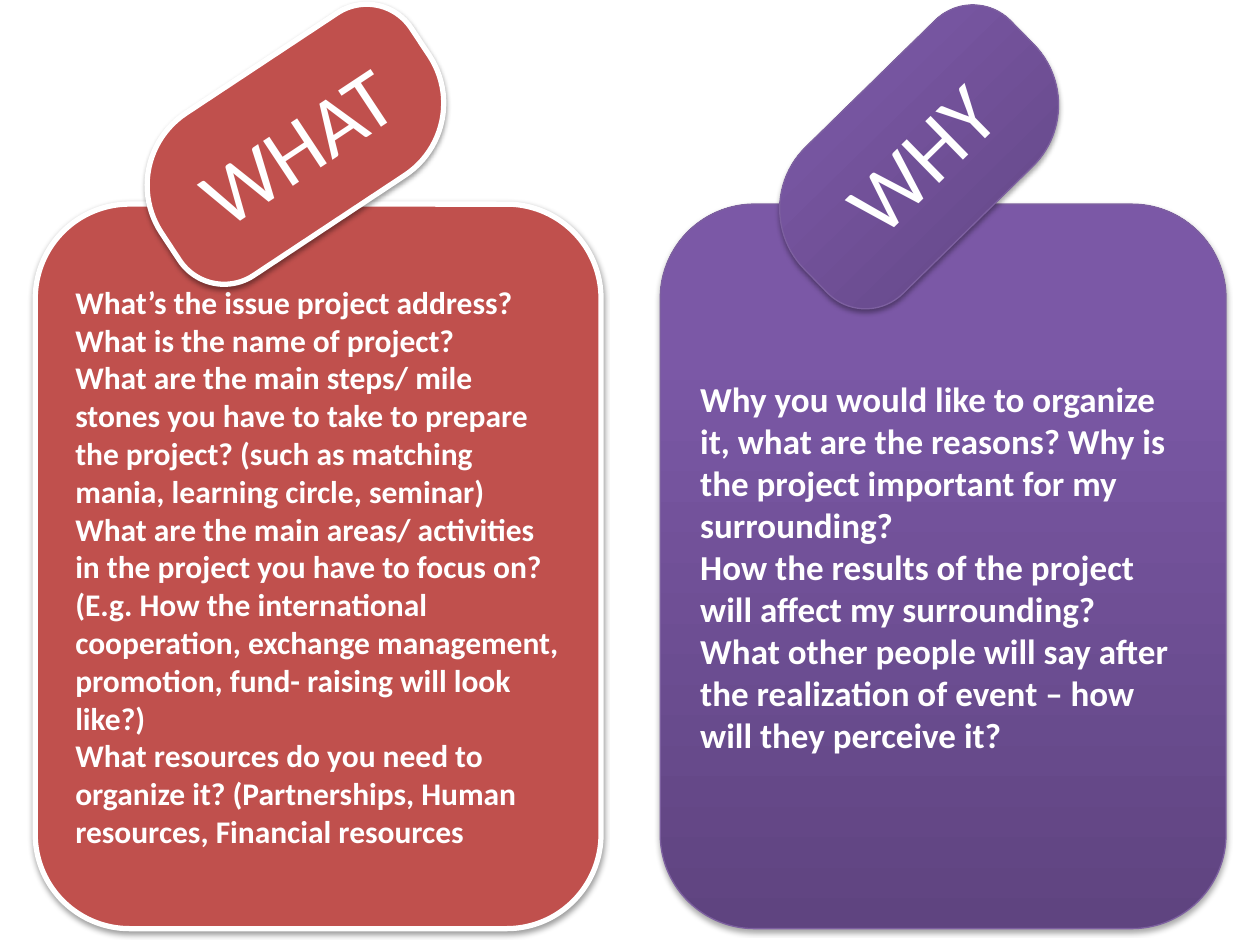
from copy import deepcopy

from lxml import etree
from pptx import Presentation
from pptx.dml.color import RGBColor
from pptx.enum.shapes import MSO_SHAPE
from pptx.enum.text import MSO_ANCHOR, PP_ALIGN
from pptx.oxml.ns import qn
from pptx.util import Inches, Pt

PANEL = MSO_SHAPE.ROUNDED_RECTANGLE
TAG = MSO_SHAPE.ROUND_2_DIAG_RECTANGLE
MIDDLE = MSO_ANCHOR.MIDDLE
LEFT, CENTER = PP_ALIGN.LEFT, PP_ALIGN.CENTER

WHITE = RGBColor(0xFF, 0xFF, 0xFF)
RED = RGBColor(0xC0, 0x50, 0x4D)
PURPLE_LINE = RGBColor(0x7D, 0x60, 0xA0)
PURPLE_STOPS = [
    (0, RGBColor(0x5F, 0x44, 0x80)),
    (0.8, RGBColor(0x7B, 0x58, 0xA6)),
    (1, RGBColor(0x7C, 0x57, 0xA8)),
]

PANEL_TOP, PANEL_W, PANEL_H = 1.62, 4.49, 5.75
TAG_W, TAG_H = 2.55, 1.37

WHAT = [
    "What’s the issue project address? What is the name of project?",
    "What are the main steps/ mile stones you have to take to prepare the project? "
    "(such as matching mania, learning circle, seminar)",
    "What are the main areas/ activities in the project you have to focus on?",
    "(E.g. How the international cooperation, exchange management, promotion, "
    "fund- raising will look like?)",
    "What resources do you need to organize it? "
    "(Partnerships, Human resources, Financial resources",
]
WHY = [
    "Why you would like to organize it, what are the reasons? "
    "Why is the project important for my surrounding?",
    "How the results of the project will affect my surrounding?",
    "What other people will say after the realization of event – "
    "how will they perceive it?",
]


def add_shadow(sp, alpha, distance):
    sp.shadow.inherit = False
    effects = sp._element.spPr.find(qn("a:effectLst"))
    shadow = etree.SubElement(
        effects, qn("a:outerShdw"), blurRad=str(Pt(3.1)), dist=str(Pt(distance)),
        dir="5400000", rotWithShape="0")
    color = etree.SubElement(shadow, qn("a:srgbClr"), val="000000")
    etree.SubElement(color, qn("a:alpha"), val=str(alpha * 1000))


def style_red(sp):
    sp.fill.solid()
    sp.fill.fore_color.rgb = RED
    sp.line.color.rgb = WHITE
    sp.line.width = Pt(3)
    add_shadow(sp, 38, 1.6)


def style_purple(sp):
    sp.fill.gradient()
    sp.fill.gradient_angle = 90
    stop_list = sp._element.spPr.find(qn("a:gradFill")).find(qn("a:gsLst"))
    stop_list.append(deepcopy(stop_list[0]))
    for stop, (position, color) in zip(sp.fill.gradient_stops, PURPLE_STOPS):
        stop.position = position
        stop.color.rgb = color
    sp.line.color.rgb = PURPLE_LINE
    sp.line.width = Pt(0.75)
    add_shadow(sp, 35, 1.8)


def add_block(s, kind, box, style, lines, size, bold, align):
    sp = s.shapes.add_shape(kind, *(Inches(v) for v in box))
    style(sp)
    tf = sp.text_frame
    tf.word_wrap = True
    tf.vertical_anchor = MIDDLE
    tf.text = "\n".join(lines)
    for p in tf.paragraphs:
        p.alignment = align
        p.font.name = "Calibri"
        p.font.size = Pt(size)
        p.font.bold = bold
        p.font.color.rgb = WHITE
    return sp


def add_card(s, left, style, lines, size, title, tag_offset, tag_top, rotation):
    add_block(s, PANEL, (left, PANEL_TOP, PANEL_W, PANEL_H),
              style, lines, size, True, LEFT)
    tag = add_block(s, TAG, (left + tag_offset, tag_top, TAG_W, TAG_H),
                    style, [title], 48, False, CENTER)
    tag.adjustments[0] = 0.5
    tag.adjustments[1] = 0.31
    tag.rotation = rotation


def main():
    prs = Presentation()
    prs.slide_width, prs.slide_height = Inches(10), Inches(7.5)
    s = prs.slides.add_slide(prs.slide_layouts[6])
    add_card(s, 0.28, style_red, WHAT, 18, "WHAT", 0.79, 0.46, 326.5)
    add_card(s, 5.24, style_purple, WHY, 20, "WHY", 0.78, 0.56, 315.6)
    prs.save("out.pptx")


if __name__ == "__main__":
    main()
